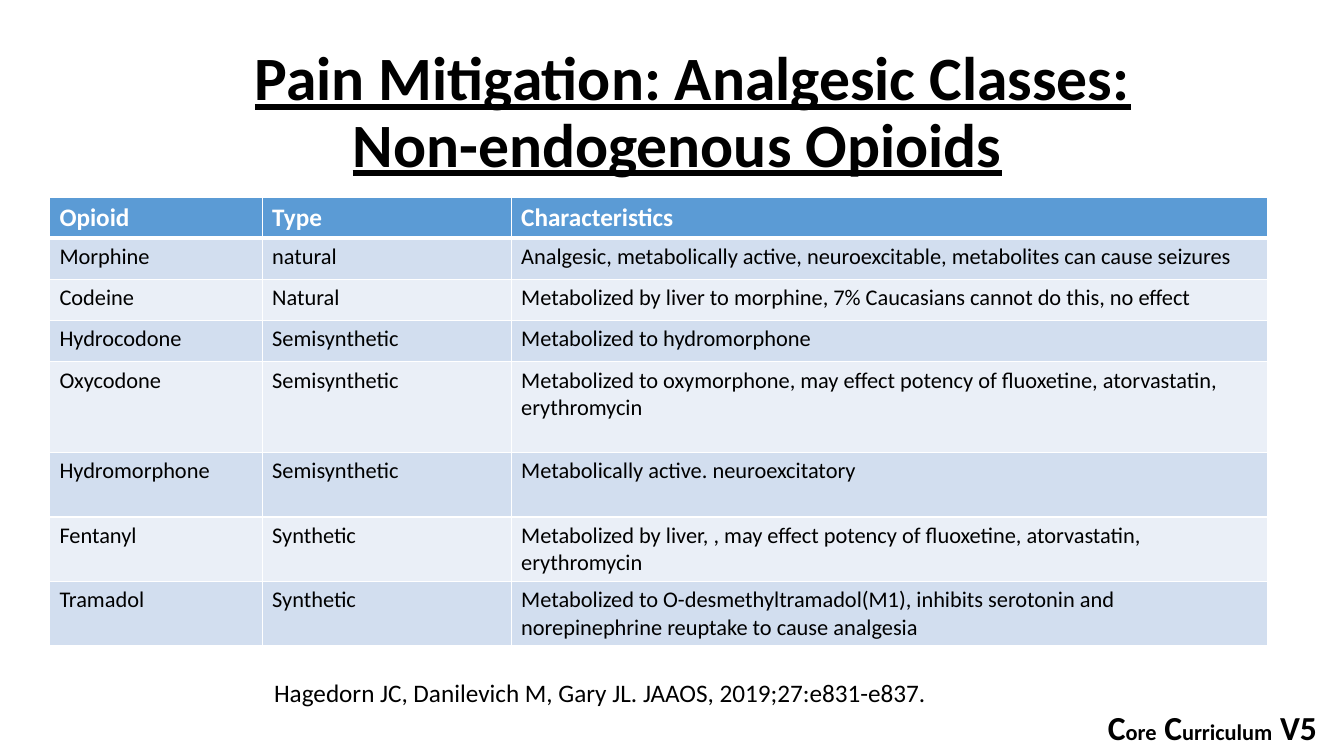
import lxml.etree
import pptx
import pptx.dml.color
import pptx.enum.text
import pptx.oxml.ns
import pptx.util

RGBColor = pptx.dml.color.RGBColor
Inches = pptx.util.Inches
Pt = pptx.util.Pt
qn = pptx.oxml.ns.qn

BLACK = RGBColor(0x00, 0x00, 0x00)
WHITE = RGBColor(0xFF, 0xFF, 0xFF)
HEADER_BLUE = RGBColor(0x5B, 0x9B, 0xD5)
BAND_BLUES = (RGBColor(0xEA, 0xEF, 0xF7), RGBColor(0xD2, 0xDE, 0xEF))

FONT = "Calibri"
LEFT = 0.49
TITLE_LINES = (
    ("Pain Mitigation: Analgesic Classes:", 1.94),
    ("Non-endogenous Opioids", 2.91),
)
CITATION = "Hagedorn JC, Danilevich M, Gary JL. JAAOS, 2019;27:e831-e837."
FOOTER_RUNS = (("C", 24), ("ore", 16), (" C", 24), ("urriculum", 16), (" V5", 24))
COLUMN_WIDTHS = (2.11, 2.47, 7.5)
ROW_HEIGHTS = (0.4, 0.41, 0.41, 0.41, 0.9, 0.64, 0.64, 0.63)
OPIOIDS = (
    ("Opioid", "Type", "Characteristics"),
    ("Morphine", "natural",
     "Analgesic, metabolically active, neuroexcitable, metabolites can cause seizures"),
    ("Codeine", "Natural",
     "Metabolized by liver to morphine, 7% Caucasians cannot do this, no effect"),
    ("Hydrocodone", "Semisynthetic", "Metabolized to hydromorphone"),
    ("Oxycodone", "Semisynthetic",
     "Metabolized to oxymorphone, may effect potency of fluoxetine, atorvastatin, erythromycin"),
    ("Hydromorphone", "Semisynthetic", "Metabolically active. neuroexcitatory"),
    ("Fentanyl", "Synthetic",
     "Metabolized by liver, , may effect potency of fluoxetine, atorvastatin, erythromycin"),
    ("Tramadol", "Synthetic",
     "Metabolized to O-desmethyltramadol(M1), inhibits serotonin and "
     "norepinephrine reuptake to cause analgesia"),
)


def style_font(font, size, color=BLACK, bold=False):
    font.name = FONT
    font.size = Pt(size)
    font.color.rgb = color
    font.bold = bold


def add_text_frame(slide, box):
    text_frame = slide.shapes.add_textbox(*map(Inches, box)).text_frame
    text_frame.word_wrap = True
    return text_frame


def add_title(slide, box):
    text_frame = add_text_frame(slide, box)
    text_frame.vertical_anchor = pptx.enum.text.MSO_ANCHOR.BOTTOM
    text_frame.text = "\n".join(line for line, indent in TITLE_LINES)
    for paragraph, (line, indent) in zip(text_frame.paragraphs, TITLE_LINES):
        paragraph.line_spacing = 0.9
        paragraph._p.get_or_add_pPr().set("marL", str(Inches(indent)))
        font = paragraph.runs[0].font
        style_font(font, 44, bold=True)
        font.underline = True


def add_citation(slide, box):
    text_frame = add_text_frame(slide, box)
    text_frame.text = CITATION
    style_font(text_frame.paragraphs[0].runs[0].font, 18)


def add_footer(slide, box):
    paragraph = add_text_frame(slide, box).paragraphs[0]
    for text, size in FOOTER_RUNS:
        run = paragraph.add_run()
        run.text = text
        style_font(run.font, size, bold=True)


def set_borders(cell, top, bottom):
    properties = cell._tc.get_or_add_tcPr()
    for side, width in (("L", 1), ("R", 1), ("T", top), ("B", bottom)):
        line = lxml.etree.SubElement(properties, qn("a:ln" + side), w=str(Pt(width)))
        fill = lxml.etree.SubElement(line, qn("a:solidFill"))
        lxml.etree.SubElement(fill, qn("a:srgbClr"), val=str(WHITE))


def add_opioid_table(slide, left, top):
    box = (left, top, sum(COLUMN_WIDTHS), sum(ROW_HEIGHTS))
    table = slide.shapes.add_table(
        len(OPIOIDS), len(COLUMN_WIDTHS), *map(Inches, box)).table
    for column, width in zip(table.columns, COLUMN_WIDTHS):
        column.width = Inches(width)
    for index, (row, height, texts) in enumerate(zip(table.rows, ROW_HEIGHTS, OPIOIDS)):
        row.height = Inches(height)
        header = index == 0
        for cell, text in zip(row.cells, texts):
            set_borders(cell, 3 if index == 1 else 1, 3 if header else 1)
            cell.fill.solid()
            cell.fill.fore_color.rgb = HEADER_BLUE if header else BAND_BLUES[index % 2]
            cell.text_frame.text = text
            style_font(cell.text_frame.paragraphs[0].runs[0].font,
                       18 if header else 16, WHITE if header else BLACK, header)


def main():
    presentation = pptx.Presentation()
    presentation.slide_width = Inches(13.33)
    presentation.slide_height = Inches(7.5)
    slide = presentation.slides.add_slide(presentation.slide_layouts[6])
    add_footer(slide, (10.89, 6.96, 2.35, 0.5))
    add_title(slide, (LEFT, 0, 12.44, 1.84))
    add_citation(slide, (2.62, 6.67, 9, 0.4))
    add_opioid_table(slide, LEFT, 1.96)
    presentation.save("out.pptx")


if __name__ == "__main__":
    main()
